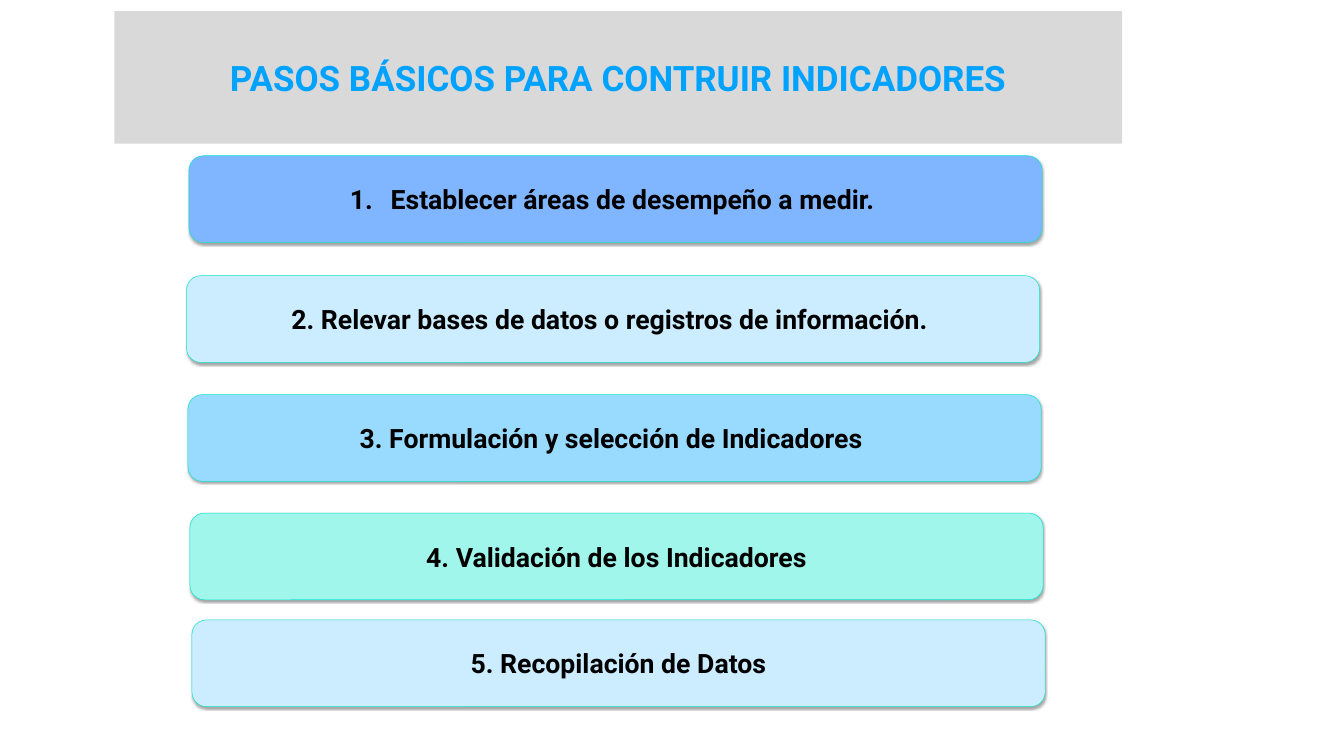
"""Build a slide listing the basic steps for constructing indicators."""
import dataclasses

import lxml.etree
import pptx
import pptx.dml.color
import pptx.enum.shapes
import pptx.enum.text
import pptx.oxml.ns
import pptx.util

Inches = pptx.util.Inches
Pt = pptx.util.Pt


@dataclasses.dataclass(frozen=True)
class Theme:
    """Colours, font and type sizes of the slide."""
    font: str = "Roboto"
    head: int = 50
    body: int = 38
    band: str = "D9D9D9"
    title: str = "00A2FF"
    ink: str = "000000"
    edge: str = "10E7CE"
    blue: str = "80B5FF"
    pale: str = "CCECFF"
    sky: str = "99DAFF"
    mint: str = "A1F6EC"


THEME = Theme()
WIDTH, HEIGHT = 16.93, 1.72
STEPS = [
    (3.75, 3.09, THEME.blue, "Establecer áreas de desempeño a medir. "),
    (3.7, 5.47, THEME.pale, "2. Relevar bases de datos o registros de información. "),
    (3.73, 7.83, THEME.sky, "3. Formulación y selección de Indicadores "),
    (3.77, 10.18, THEME.mint, "4. Validación de los Indicadores"),
    (3.81, 12.3, THEME.pale, "5. Recopilación de Datos"),
]


def rgb(code):
    """Return the colour for a hex code."""
    return pptx.dml.color.RGBColor.from_string(code)


def add_node(parent, tag, **attrs):
    """Append a drawing element with its attributes."""
    return lxml.etree.SubElement(parent, pptx.oxml.ns.qn(tag), attrs)


def paint(shape, code):
    """Fill a shape with a solid colour."""
    shape.fill.solid()
    shape.fill.fore_color.rgb = rgb(code)


def write(shape, text, size, code):
    """Put one bold centred line in a shape and return its paragraph."""
    frame = shape.text_frame
    frame.text = text
    frame.word_wrap = True
    frame.auto_size = pptx.enum.text.MSO_AUTO_SIZE.NONE
    frame.vertical_anchor = pptx.enum.text.MSO_ANCHOR.MIDDLE
    line = frame.paragraphs[0]
    line.alignment = pptx.enum.text.PP_ALIGN.CENTER
    line.font.name = THEME.font
    line.font.size = Pt(size)
    line.font.bold = True
    line.font.color.rgb = rgb(code)
    return line


def add_shade(shape):
    """Give a shape a soft shadow straight below it."""
    shape.shadow.inherit = False
    effects = shape.element.spPr.find(pptx.oxml.ns.qn("a:effectLst"))
    shade = add_node(effects, "a:outerShdw", blurRad=str(Pt(3.1)),
                     dist=str(Pt(1.8)), dir="5400000", rotWithShape="0")
    tint = add_node(shade, "a:srgbClr", val=THEME.ink)
    add_node(tint, "a:alpha", val="35000")


def number(line):
    """Turn a paragraph into an automatically numbered one."""
    props = line._p.get_or_add_pPr()
    indent = Inches(0.81)
    props.set("marL", str(indent))
    props.set("indent", str(-indent))
    props.insert(0, add_node(props, "a:buAutoNum", type="arabicPeriod"))


def add_title(slide, text):
    """Place the title on its grey band."""
    title = slide.shapes.title
    title.left, title.top = Inches(2.27), Inches(0.22)
    title.width, title.height = Inches(20), Inches(2.63)
    paint(title, THEME.band)
    write(title, text, THEME.head, THEME.title)


def add_step(slide, left, top, code, text):
    """Add a rounded step box and return its paragraph."""
    box = slide.shapes.add_shape(
        pptx.enum.shapes.MSO_SHAPE.ROUNDED_RECTANGLE,
        Inches(left), Inches(top), Inches(WIDTH), Inches(HEIGHT))
    paint(box, code)
    box.line.color.rgb = rgb(THEME.edge)
    box.line.width = Pt(0.75)
    add_shade(box)
    return write(box, text, THEME.body, THEME.ink)


def main():
    """Build and save the slide."""
    deck = pptx.Presentation()
    deck.slide_width, deck.slide_height = Inches(26.67), Inches(15)
    slide = deck.slides.add_slide(deck.slide_layouts.get_by_name("Title Only"))
    add_title(slide, "PASOS BÁSICOS PARA CONTRUIR INDICADORES")
    lines = [add_step(slide, *step) for step in STEPS]
    number(lines[0])
    deck.save("out.pptx")


if __name__ == "__main__":
    main()
